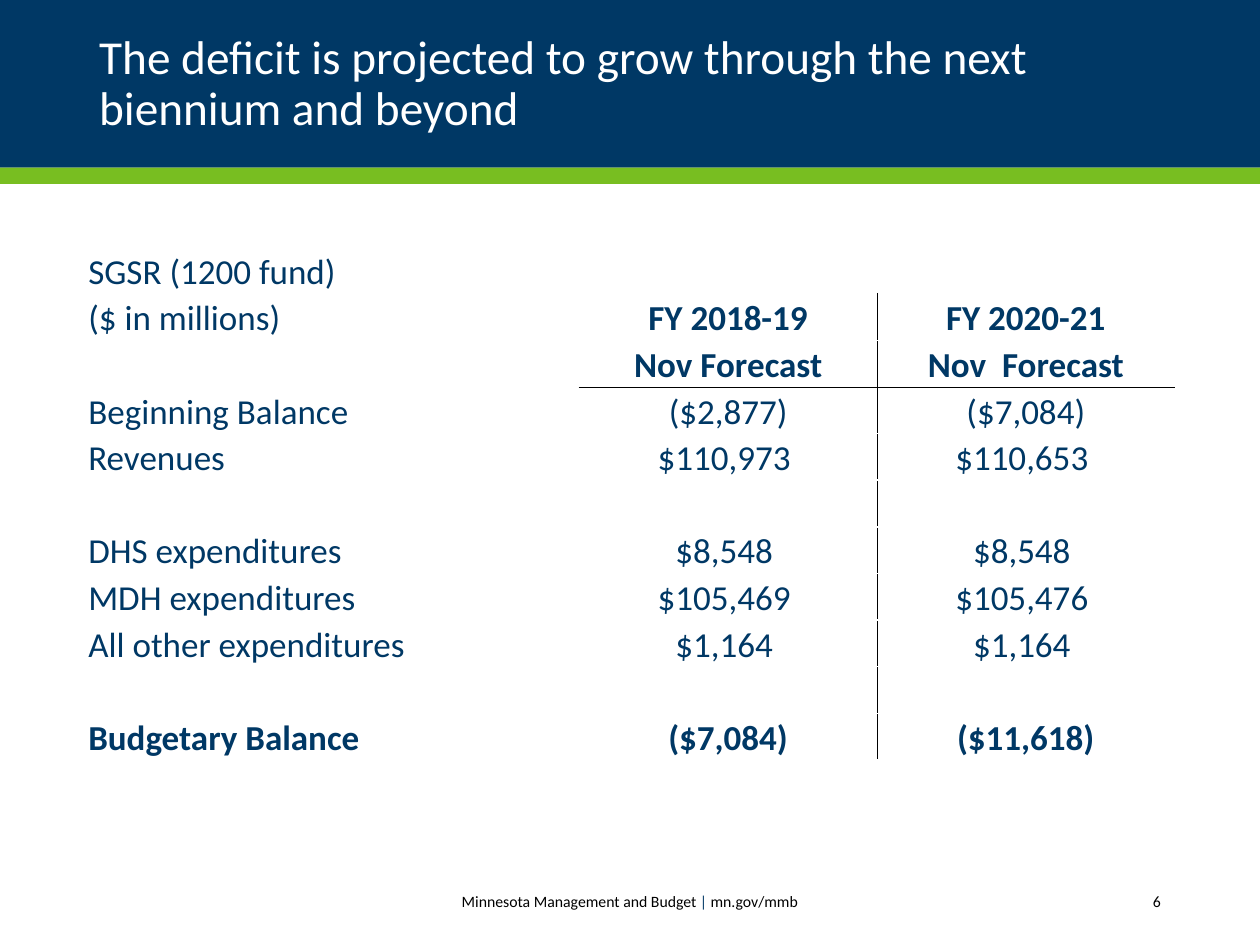
from typing import NamedTuple

from lxml.etree import SubElement
from pptx import Presentation
from pptx.dml.color import RGBColor
from pptx.enum.shapes import MSO_SHAPE
from pptx.enum.text import MSO_ANCHOR, PP_ALIGN
from pptx.oxml.ns import qn
from pptx.util import Cm, Pt

NAVY, GREEN, WHITE, BLACK = "003865", "78BE21", "FFFFFF", "000000"


class Band(NamedTuple):
    top: float
    height: float
    color: str


class Caption(NamedTuple):
    left: float
    top: float
    width: float
    height: float
    runs: list[tuple[str, str]]
    size: int
    align: PP_ALIGN
    spacing: float = 1.0


class BudgetRow(NamedTuple):
    label: str = ""
    current: str = ""
    following: str = ""
    bold: bool = False


BANDS = [Band(0, 3.38, NAVY), Band(3.38, 0.33, GREEN)]
CAPTIONS = [
    Caption(1.75, 0.43, 21.89, 2.54,
            [("The deficit is projected to grow through the next biennium and beyond", WHITE)],
            27, PP_ALIGN.LEFT, 0.9),
    Caption(6.88, 17.65, 11.63, 1.02,
            [("Minnesota Management and Budget ", BLACK), ("|", NAVY), (" mn.gov/mmb", BLACK)],
            9, PP_ALIGN.CENTER),
    Caption(20.6, 17.65, 3.05, 1.02, [("6", BLACK)], 9, PP_ALIGN.RIGHT),
]
BUDGET = [
    BudgetRow("SGSR (1200 fund)"),
    BudgetRow("($ in millions)", "FY 2018-19", "FY 2020-21"),
    BudgetRow("", "Nov Forecast", "Nov  Forecast"),
    BudgetRow("Beginning Balance", "($2,877)", "($7,084)"),
    BudgetRow("Revenues", "$110,973 ", "$110,653 "),
    BudgetRow(),
    BudgetRow("DHS expenditures", "$8,548 ", "$8,548 "),
    BudgetRow("MDH expenditures", "$105,469 ", "$105,476 "),
    BudgetRow("All other expenditures", "$1,164 ", "$1,164 "),
    BudgetRow(),
    BudgetRow("Budgetary Balance", "($7,084)", "($11,618)", True),
]
HEADING_ROWS = (1, 2)
LAST_HEADING = HEADING_ROWS[-1]
COLUMN_WIDTHS = (9.93, 6, 6)
ROW_HEIGHT = 0.94


def rgb(color: str) -> RGBColor:
    return RGBColor.from_string(color)


def draw_band(slide, band: Band, width: int) -> None:
    bar = slide.shapes.add_shape(MSO_SHAPE.RECTANGLE, 0, Cm(band.top), width, Cm(band.height))
    bar.shadow.inherit = False
    bar.fill.solid()
    bar.fill.fore_color.rgb = rgb(band.color)
    bar.line.fill.background()


def draw_caption(slide, caption: Caption) -> None:
    frame = slide.shapes.add_textbox(Cm(caption.left), Cm(caption.top),
                                     Cm(caption.width), Cm(caption.height)).text_frame
    frame.word_wrap = True
    frame.vertical_anchor = MSO_ANCHOR.MIDDLE
    paragraph = frame.paragraphs[0]
    paragraph.alignment = caption.align
    paragraph.line_spacing = caption.spacing
    paragraph.font.name = "Calibri"
    paragraph.font.size = Pt(caption.size)
    for text, color in caption.runs:
        run = paragraph.add_run()
        run.text = text
        run.font.color.rgb = rgb(color)


def rule_cell(cell, sides: list[str]) -> None:
    properties = cell._tc.get_or_add_tcPr()
    for side in sides:
        edge = SubElement(properties, qn(f"a:ln{side}"), w=str(Pt(0.5)))
        SubElement(SubElement(edge, qn("a:solidFill")), qn("a:srgbClr"), val=BLACK)


def cell_sides(row: int, column: int) -> list[str]:
    if row == 0 or column == 0:
        return []
    sides = ["R" if column == 1 else "L"]
    if row == LAST_HEADING:
        sides.append("B")
    elif row == LAST_HEADING + 1:
        sides.append("T")
    return sides


def fill_cell(cell, text: str, bold: bool, align: PP_ALIGN) -> None:
    cell.margin_left = cell.margin_right = cell.margin_top = Cm(0.03)
    cell.margin_bottom = 0
    cell.vertical_anchor = MSO_ANCHOR.BOTTOM
    cell.text = text
    paragraph = cell.text_frame.paragraphs[0]
    paragraph.alignment = align
    paragraph.font.name = "Calibri"
    paragraph.font.size = Pt(20)
    paragraph.font.bold = bold
    paragraph.font.color.rgb = rgb(NAVY)


def draw_budget(slide, budget: list[BudgetRow]) -> None:
    table = slide.shapes.add_table(len(budget), len(COLUMN_WIDTHS), Cm(1.75), Cm(4.98),
                                   Cm(sum(COLUMN_WIDTHS)), Cm(ROW_HEIGHT * len(budget))).table
    table.first_row = table.horz_banding = False
    for column, width in zip(table.columns, COLUMN_WIDTHS):
        column.width = Cm(width)
    for row, entry in enumerate(budget):
        table.rows[row].height = Cm(ROW_HEIGHT)
        for column, text in enumerate((entry.label, entry.current, entry.following)):
            cell = table.cell(row, column)
            bold = entry.bold or (row in HEADING_ROWS and column > 0)
            fill_cell(cell, text, bold, PP_ALIGN.CENTER if column else PP_ALIGN.LEFT)
            rule_cell(cell, cell_sides(row, column))
            cell.fill.background()


def main() -> None:
    """Build the slide on the projected budget deficit."""
    deck = Presentation()
    deck.slide_width, deck.slide_height = Cm(25.4), Cm(19.05)
    slide = deck.slides.add_slide(deck.slide_layouts[6])
    for band in BANDS:
        draw_band(slide, band, deck.slide_width)
    for caption in CAPTIONS:
        draw_caption(slide, caption)
    draw_budget(slide, BUDGET)
    deck.save("out.pptx")


if __name__ == "__main__":
    main()
